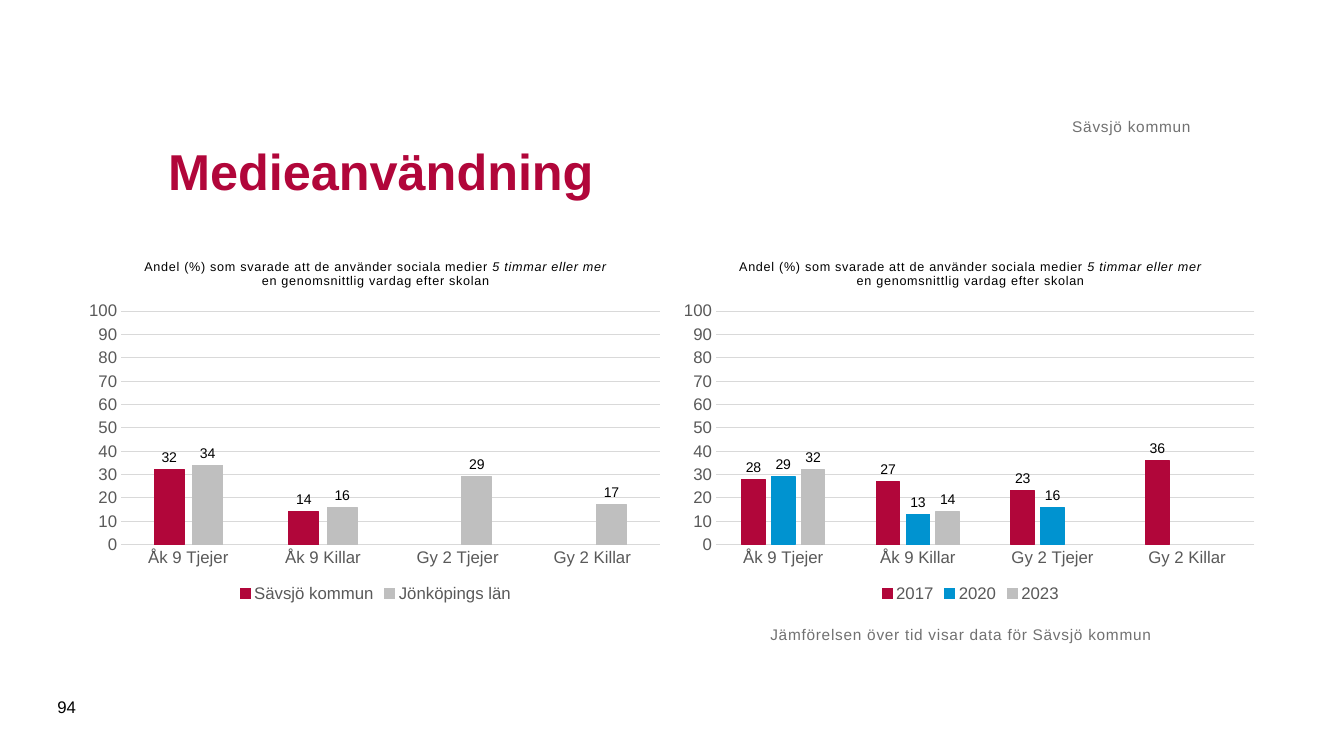
import dataclasses

import pptx
import pptx.chart.data
import pptx.dml.color
import pptx.enum.chart
import pptx.enum.text
import pptx.oxml
import pptx.oxml.ns
import pptx.util

Pt = pptx.util.Pt
Anchor = pptx.enum.text.MSO_ANCHOR
Align = pptx.enum.text.PP_ALIGN
SCALE = 9144


@dataclasses.dataclass(frozen=True)
class Theme:
    face: str = "Arial"
    red: str = "B1063A"
    blue: str = "0093D0"
    silver: str = "BFBFBF"
    grid: str = "D9D9D9"
    axis: str = "595959"
    muted: str = "717171"
    black: str = "000000"
    head: int = 36
    body: int = 12
    note: int = 11
    label: int = 10
    small: int = 9
    line: float = 0.75
    track: int = 50
    digits: str = "#,##0;#,##0"


def px(value):
    return pptx.util.Emu(value * SCALE)


def color(code):
    return pptx.dml.color.RGBColor.from_string(code)


class Page:
    def __init__(self, deck, theme):
        self.theme = theme
        self.slide = deck.slides.add_slide(deck.slide_layouts[6])

    def font(self, font, size, code, bold=False):
        font.name = self.theme.face
        font.size = Pt(size)
        font.bold = bold
        font.color.rgb = color(code)

    def track(self, run):
        run._r.get_or_add_rPr().set("spc", str(self.theme.track))

    def text(self, words, box, size, code, bold=False, anchor=Anchor.TOP,
             align=Align.LEFT, inset=True, track=False):
        frame = self.slide.shapes.add_textbox(*map(px, box)).text_frame
        frame.word_wrap = True
        frame.vertical_anchor = anchor
        if not inset:
            frame.margin_left = frame.margin_right = 0
            frame.margin_top = frame.margin_bottom = 0
        para = frame.paragraphs[0]
        para.alignment = align
        run = para.add_run()
        run.text = words
        self.font(para.font, size, code, bold)
        if track:
            self.track(run)

    def title(self, chart, parts):
        chart.has_title = True
        para = chart.chart_title.text_frame.paragraphs[0]
        self.font(para.font, self.theme.small, self.theme.black)
        for words, slant in parts:
            run = para.add_run()
            run.text = words
            self.font(run.font, self.theme.small, self.theme.black)
            run.font.italic = slant
            self.track(run)
        chart.chart_title.include_in_layout = False

    def axis(self, axis):
        none = pptx.enum.chart.XL_TICK_MARK.NONE
        axis.major_tick_mark = axis.minor_tick_mark = none
        self.font(axis.tick_labels.font, self.theme.body, self.theme.axis)

    def line(self, line, code):
        line.color.rgb = color(code)
        line.width = Pt(self.theme.line)

    def place(self, chart, area):
        plot = chart._chartSpace.chart.plotArea
        for old in plot.findall(pptx.oxml.ns.qn("c:layout")):
            plot.remove(old)
        sizes = "".join(f'<c:{k} val="{v}"/>' for k, v in zip("xywh", area))
        plot.insert(0, pptx.oxml.parse_xml(
            f'<c:layout {pptx.oxml.ns.nsdecls("c")}><c:manualLayout>'
            '<c:layoutTarget val="inner"/><c:xMode val="edge"/>'
            f'<c:yMode val="edge"/>{sizes}</c:manualLayout></c:layout>'))

    def chart(self, box, parts, groups, rows):
        theme = self.theme
        data = pptx.chart.data.CategoryChartData()
        data.categories = groups
        for name, values, _ in rows:
            data.add_series(name, values)
        kind = pptx.enum.chart.XL_CHART_TYPE.COLUMN_CLUSTERED
        chart = self.slide.shapes.add_chart(kind, *map(px, box), data).chart
        self.font(chart.font, theme.label, theme.black)
        self.title(chart, parts)
        self.place(chart, (0.07, 0.19, 0.91, 0.64))

        self.axis(chart.category_axis)
        self.line(chart.category_axis.format.line, theme.grid)
        scale = chart.value_axis
        self.axis(scale)
        scale.minimum_scale, scale.maximum_scale = 0, 100
        scale.major_unit = 10
        scale.format.line.fill.background()
        scale.tick_labels.number_format = theme.digits
        scale.tick_labels.number_format_is_linked = False
        scale.has_major_gridlines = True
        self.line(scale.major_gridlines.format.line, theme.grid)

        chart.has_legend = True
        chart.legend.position = pptx.enum.chart.XL_LEGEND_POSITION.BOTTOM
        chart.legend.include_in_layout = False
        self.font(chart.legend.font, theme.body, theme.axis)

        plot = chart.plots[0]
        plot.vary_by_categories = False
        plot.gap_width, plot.overlap = 219, -27
        for bars, (_, _, code) in zip(plot.series, rows):
            bars.invert_if_negative = False
            bars.format.fill.solid()
            bars.format.fill.fore_color.rgb = color(code)
            self.line(bars.format.line, code)
            labels = bars.data_labels
            labels.show_value = True
            labels.position = pptx.enum.chart.XL_LABEL_POSITION.OUTSIDE_END
            labels.number_format = theme.digits
            labels.number_format_is_linked = False
            self.font(labels.font, theme.label, theme.black)


def main():
    deck = pptx.Presentation()
    deck.slide_width, deck.slide_height = px(1333), px(750)
    theme = Theme()
    page = Page(deck, theme)

    groups = ["Åk 9 Tjejer", "Åk 9 Killar", "Gy 2 Tjejer", "Gy 2 Killar"]
    parts = [
        ("Andel (%) som svarade att de använder sociala medier ", False),
        ("5 timmar eller mer ", True),
        ("en genomsnittlig vardag efter skolan", False),
    ]
    places = [
        ("Sävsjö kommun", (32, 14, None, None), theme.red),
        ("Jönköpings län", (34, 16, 29, 17), theme.silver),
    ]
    years = [
        ("2017", (28, 27, 23, 36), theme.red),
        ("2020", (29, 13, 16, None), theme.blue),
        ("2023", (32, 14, None, None), theme.silver),
    ]
    for left, rows in ((79, places), (669, years)):
        page.chart((left, 240, 587, 362), parts, groups, rows)

    page.text("Medieanvändning", (157, 98, 1024, 142), theme.head, theme.red,
              bold=True, anchor=Anchor.MIDDLE)
    page.text("Jämförelsen över tid visar data för Sävsjö kommun",
              (764, 620, 531, 94), theme.note, theme.muted,
              inset=False, track=True)
    page.text("Sävsjö kommun", (157, 62, 1024, 73), theme.note, theme.muted,
              anchor=Anchor.BOTTOM, align=Align.RIGHT, inset=False, track=True)
    page.text("94", (47, 681, 57, 40), theme.body, theme.black,
              anchor=Anchor.MIDDLE)
    deck.save("out.pptx")


if __name__ == "__main__":
    main()
